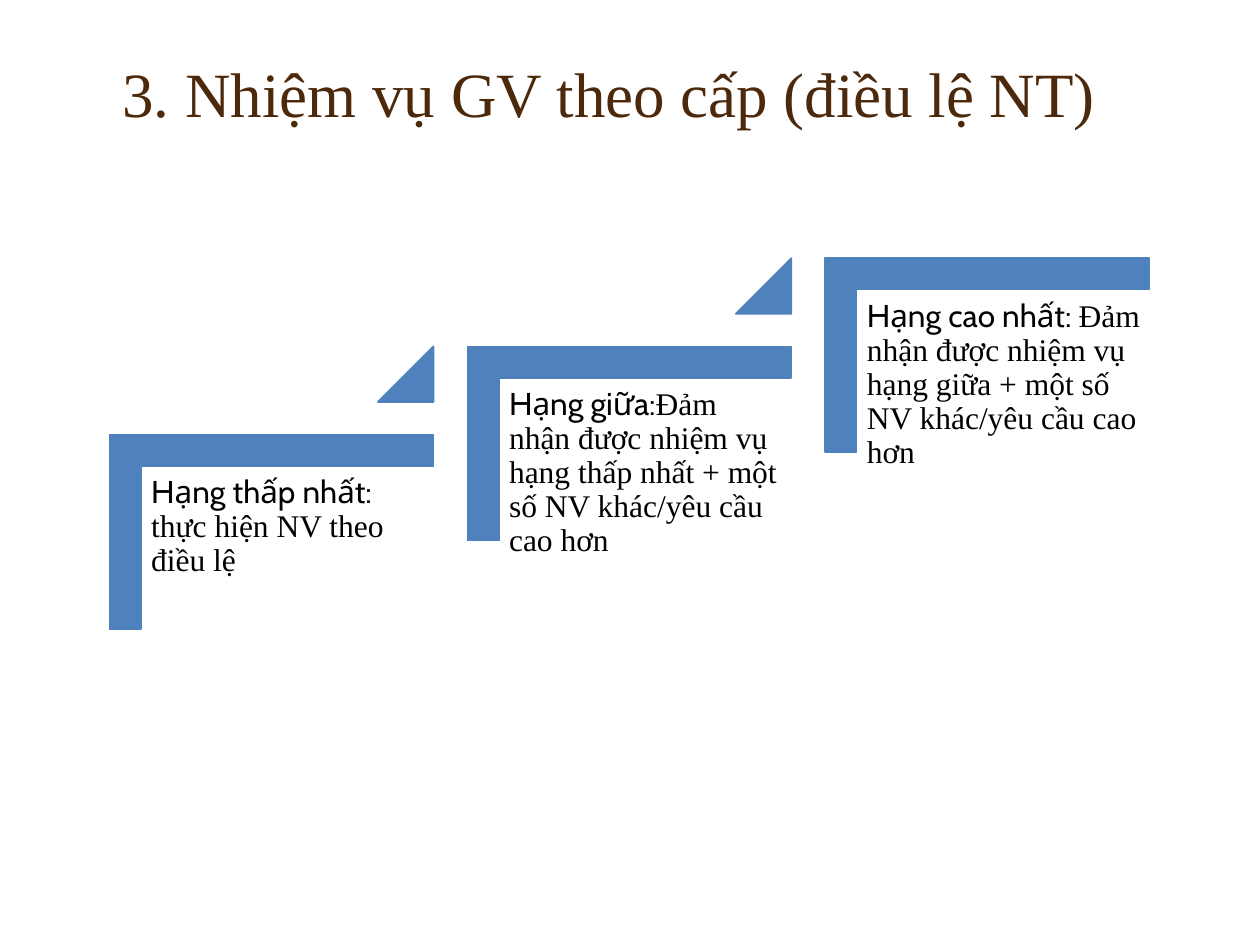
from pptx import Presentation
from pptx.dml.color import RGBColor
from pptx.enum.shapes import MSO_SHAPE as Shape
from pptx.enum.text import MSO_ANCHOR as Anchor, MSO_AUTO_SIZE as AutoSize, PP_ALIGN as Align
from pptx.util import Inches, Pt

COLORS = {"title": "4D290B", "step": "4F81BD", "text": "000000"}
BODY_FONT, LABEL_FONT = "Times New Roman", "Cabin"

# Staircase grid: each step is one column right and one row up
LEFT, BOTTOM_TOP = 0.87, 3.45
COLUMN, ROW = 2.84, 0.7
STEP_W, STEP_H = 2.57, 1.54
TEXT_INSET, TEXT_W, TEXT_H = 0.26, 2.32, 2.03
MARKER = 0.44


class StairSlide:
    def __init__(self, prs):
        self.slide = prs.slides.add_slide(prs.slide_layouts[5])

    def color(self, name):
        return RGBColor.from_string(COLORS[name])

    def origin(self, level):
        return LEFT + level * COLUMN, BOTTOM_TOP - level * ROW

    def title(self, text):
        title = self.slide.shapes.title
        title.left, title.top = Inches(0.87), Inches(0.17)
        title.width, title.height = Inches(8.25), Inches(0.92)
        frame = title.text_frame
        frame.text = text
        frame.auto_size = AutoSize.NONE
        frame.vertical_anchor = Anchor.BOTTOM
        paragraph = frame.paragraphs[0]
        paragraph.alignment, paragraph.line_spacing = Align.LEFT, 0.9
        paragraph.font.name, paragraph.font.size = BODY_FONT, Pt(36)
        paragraph.font.color.rgb = self.color("title")

    def solid(self, kind, x, y, w, h):
        shape = self.slide.shapes.add_shape(kind, Inches(x), Inches(y), Inches(w), Inches(h))
        shape.shadow.inherit = False
        shape.fill.solid()
        shape.fill.fore_color.rgb = shape.line.color.rgb = self.color("step")
        shape.line.width = Pt(1)
        return shape

    def bracket(self, level):
        x, y = self.origin(level)
        # The corner is turned a quarter about its centre
        shift = (STEP_W - STEP_H) / 2
        corner = self.solid(Shape.CORNER, x + shift, y - shift, STEP_H, STEP_W)
        corner.rotation = 90
        corner.adjustments[0] = corner.adjustments[1] = 0.161

    def marker(self, level):
        x, y = self.origin(level)
        triangle = self.solid(Shape.ISOSCELES_TRIANGLE, x + STEP_W - MARKER, y - ROW, MARKER, MARKER)
        triangle.adjustments[0] = 1

    def duty(self, level, label, description):
        x, y = self.origin(level)
        box = self.slide.shapes.add_textbox(
            Inches(x + TEXT_INSET), Inches(y + TEXT_INSET), Inches(TEXT_W), Inches(TEXT_H))
        frame = box.text_frame
        frame.word_wrap = True
        frame.margin_left = frame.margin_right = Inches(0.07)
        frame.margin_top = frame.margin_bottom = Inches(0.07)
        paragraph = frame.paragraphs[0]
        paragraph.line_spacing = 0.9
        paragraph.font.size = Pt(18)
        paragraph.font.color.rgb = self.color("text")
        for text, font in ((label, LABEL_FONT), (description, BODY_FONT)):
            run = paragraph.add_run()
            run.text, run.font.name = text, font


def main():
    prs = Presentation()
    prs.slide_width, prs.slide_height = Inches(10), Inches(7.5)
    stairs = StairSlide(prs)
    stairs.title("3. Nhiệm vụ GV theo cấp (điều lệ NT)")

    # Teacher ranks, lowest first
    ranks = [
        ("Hạng thấp nhất: ", "thực hiện NV theo điều lệ"),
        ("Hạng giữa:", "Đảm nhận được nhiệm vụ hạng thấp nhất + một số NV khác/yêu cầu cao hơn"),
        ("Hạng cao nhất: ", "Đảm nhận được nhiệm vụ hạng giữa + một số NV khác/yêu cầu cao hơn"),
    ]
    for level, (label, description) in enumerate(ranks):
        stairs.bracket(level)
        stairs.duty(level, label, description)
        if level < len(ranks) - 1:
            stairs.marker(level)

    prs.save("out.pptx")


if __name__ == "__main__":
    main()
